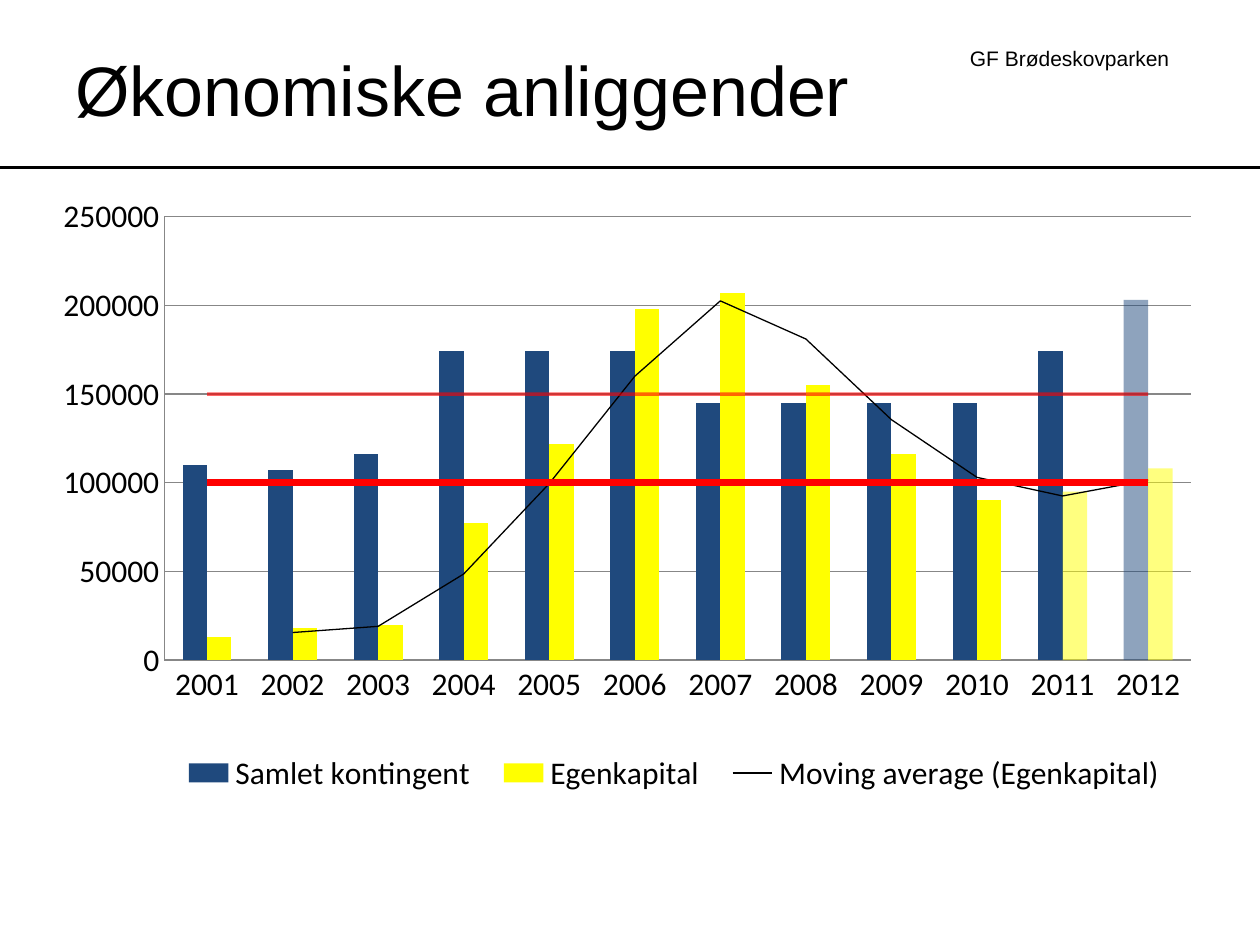
from lxml import etree
from pptx import Presentation
from pptx.chart.data import CategoryChartData
from pptx.dml.color import RGBColor
from pptx.enum.chart import XL_CHART_TYPE, XL_LEGEND_POSITION, XL_TICK_MARK
from pptx.enum.shapes import MSO_CONNECTOR
from pptx.enum.text import MSO_ANCHOR, PP_ALIGN
from pptx.oxml import parse_xml
from pptx.oxml.ns import nsdecls, qn
from pptx.util import Inches, Pt

COLORS = {"black": "000000", "grey": "878787", "blue": "1F497D",
          "yellow": "FFFF00", "red": "FF0000"}

TEXTS = [
    dict(text="GF Brødeskovparken", at=(7.58, 0.31, 1.8, 0.3), size=12,
         align=PP_ALIGN.RIGHT, anchor=MSO_ANCHOR.TOP),
    dict(text="Økonomiske anliggender", at=(0.5, 0.23, 7, 0.94), size=40,
         align=PP_ALIGN.LEFT, anchor=MSO_ANCHOR.MIDDLE),
]

YEARS = [str(year) for year in range(2001, 2013)]
BARS = [  # name, colour, first translucent point, values
    ("Samlet kontingent", "blue", 11,
     [110000, 107000, 116000, 174000, 174000, 174000,
      145000, 145000, 145000, 145000, 174000, 203000]),
    ("Egenkapital", "yellow", 10,
     [13000, 18000, 20000, 77000, 122000, 198000,
      207000, 155000, 116000, 90000, 95000, 108000]),
]
LIMITS = [  # level, line width, opacity in percent
    (100000, 4, 100),
    (150000, 2, 60),
]
PLOT_AREA = (0.119, 0.062, 0.848, 0.704)
LEGEND_AREA = (0.12, 0.89, 0.84, 0.11)


def rgb(name):
    return RGBColor.from_string(COLORS[name])


def set_alpha(props, percent):
    for color in props.iter(qn("a:srgbClr")):
        etree.SubElement(color, qn("a:alpha")).set("val", str(percent * 1000))


def style_line(line, color, width):
    line.color.rgb = rgb(color)
    line.width = Pt(width)


def manual_layout(area, inner=False):
    target = '<c:layoutTarget val="inner"/>' if inner else ""
    modes = "".join(f'<c:{k}Mode val="edge"/>' for k in "xy")
    sizes = "".join(f'<c:{k} val="{v}"/>' for k, v in zip("xywh", area))
    return parse_xml(f'<c:layout {nsdecls("c")}><c:manualLayout>{target}{modes}'
                     f'{sizes}</c:manualLayout></c:layout>')


def replace_layout(parent, layout, index):
    for old in parent.findall(qn("c:layout")):
        parent.remove(old)
    parent.insert(index, layout)


def add_text(s, text, at, size, align, anchor):
    tf = s.shapes.add_textbox(*map(Inches, at)).text_frame
    tf.word_wrap = True
    tf.vertical_anchor = anchor
    p = tf.paragraphs[0]
    p.alignment = align
    r = p.add_run()
    r.text = text
    for key, value in dict(name="Arial", size=Pt(size)).items():
        setattr(r.font, key, value)
    r.font.color.rgb = rgb("black")


def move_to_line_plot(chart, series_list):
    bar = chart.plots[0]._element
    plot = parse_xml(f'<c:lineChart {nsdecls("c")}><c:grouping val="standard"/>'
                     '<c:varyColors val="0"/><c:marker val="1"/></c:lineChart>')
    for series in series_list:
        ser = series._element
        for tag in ("c:tx", "c:invertIfNegative"):
            for node in ser.findall(qn(tag)):
                ser.remove(node)
        ser.find(qn("c:cat")).addprevious(parse_xml(
            f'<c:marker {nsdecls("c")}><c:symbol val="none"/></c:marker>'))
        plot.find(qn("c:marker")).addprevious(ser)
    for axis in bar.findall(qn("c:axId")):
        etree.SubElement(plot, qn("c:axId")).set("val", axis.get("val"))
    bar.addnext(plot)


def add_moving_average(series):
    series._element.find(qn("c:cat")).addprevious(parse_xml(
        f'<c:trendline {nsdecls("c", "a")}><c:spPr><a:ln w="{Pt(0.75)}"><a:solidFill>'
        f'<a:srgbClr val="{COLORS["black"]}"/></a:solidFill></a:ln></c:spPr>'
        '<c:trendlineType val="movingAvg"/><c:period val="2"/>'
        '<c:dispRSqr val="0"/><c:dispEq val="0"/></c:trendline>'))


def add_chart(s):
    data = CategoryChartData()
    data.categories = YEARS
    for name, _, _, values in BARS:
        data.add_series(name, values)
    for level, _, _ in LIMITS:
        data.add_series("", [level] * len(YEARS))
    chart = s.shapes.add_chart(XL_CHART_TYPE.COLUMN_CLUSTERED,
                               *map(Inches, (0.16, 1.41, 9.61, 5)), data).chart
    chart.has_title = False
    for key, value in dict(name="Calibri", size=Pt(18)).items():
        setattr(chart.font, key, value)
    chart.font.color.rgb = rgb("black")

    plot = chart.plots[0]
    plot.vary_by_categories = False
    plot.gap_width, plot.overlap = 150, 0
    series_list = list(plot.series)
    bars, limits = series_list[:len(BARS)], series_list[len(BARS):]

    for series, (_, color, first_faded, _) in zip(bars, BARS):
        series.format.fill.solid()
        series.format.fill.fore_color.rgb = rgb(color)
        for i in range(first_faded, len(YEARS)):
            fill = series.points[i].format.fill
            fill.solid()
            fill.fore_color.rgb = rgb(color)
        for point in series._element.findall(qn("c:dPt")):
            set_alpha(point, 50)
    add_moving_average(bars[1])

    for series, (_, width, opacity) in zip(limits, LIMITS):
        style_line(series.format.line, "red", width)
        set_alpha(series._element, opacity)
    move_to_line_plot(chart, limits)

    for axis in (chart.category_axis, chart.value_axis):
        axis.major_tick_mark = axis.minor_tick_mark = XL_TICK_MARK.NONE
        style_line(axis.format.line, "grey", 0.75)
    axis = chart.value_axis
    axis.minimum_scale, axis.maximum_scale, axis.major_unit = 0, 250000, 50000
    axis.has_major_gridlines = True
    style_line(axis.major_gridlines.format.line, "grey", 0.75)
    replace_layout(plot._element.getparent(), manual_layout(PLOT_AREA, True), 0)

    chart.has_legend = True
    legend = chart.legend
    legend.position = XL_LEGEND_POSITION.RIGHT
    legend.include_in_layout = False
    replace_layout(legend._element, manual_layout(LEGEND_AREA), 1)
    for i in reversed(range(len(BARS), len(series_list))):
        legend._element.insert(1, parse_xml(
            f'<c:legendEntry {nsdecls("c")}><c:idx val="{i}"/>'
            '<c:delete val="1"/></c:legendEntry>'))


def main():
    prs = Presentation()
    prs.slide_width, prs.slide_height = Inches(10), Inches(7.5)
    s = prs.slides.add_slide(prs.slide_layouts[6])
    for item in TEXTS:
        add_text(s, **item)
    rule = s.shapes.add_connector(MSO_CONNECTOR.STRAIGHT, 0, Inches(1.33),
                                  prs.slide_width, Inches(1.33))
    style_line(rule.line, "black", 1.5)
    etree.SubElement(rule._element.spPr, qn("a:effectLst"))
    add_chart(s)
    prs.save("out.pptx")


if __name__ == "__main__":
    main()
